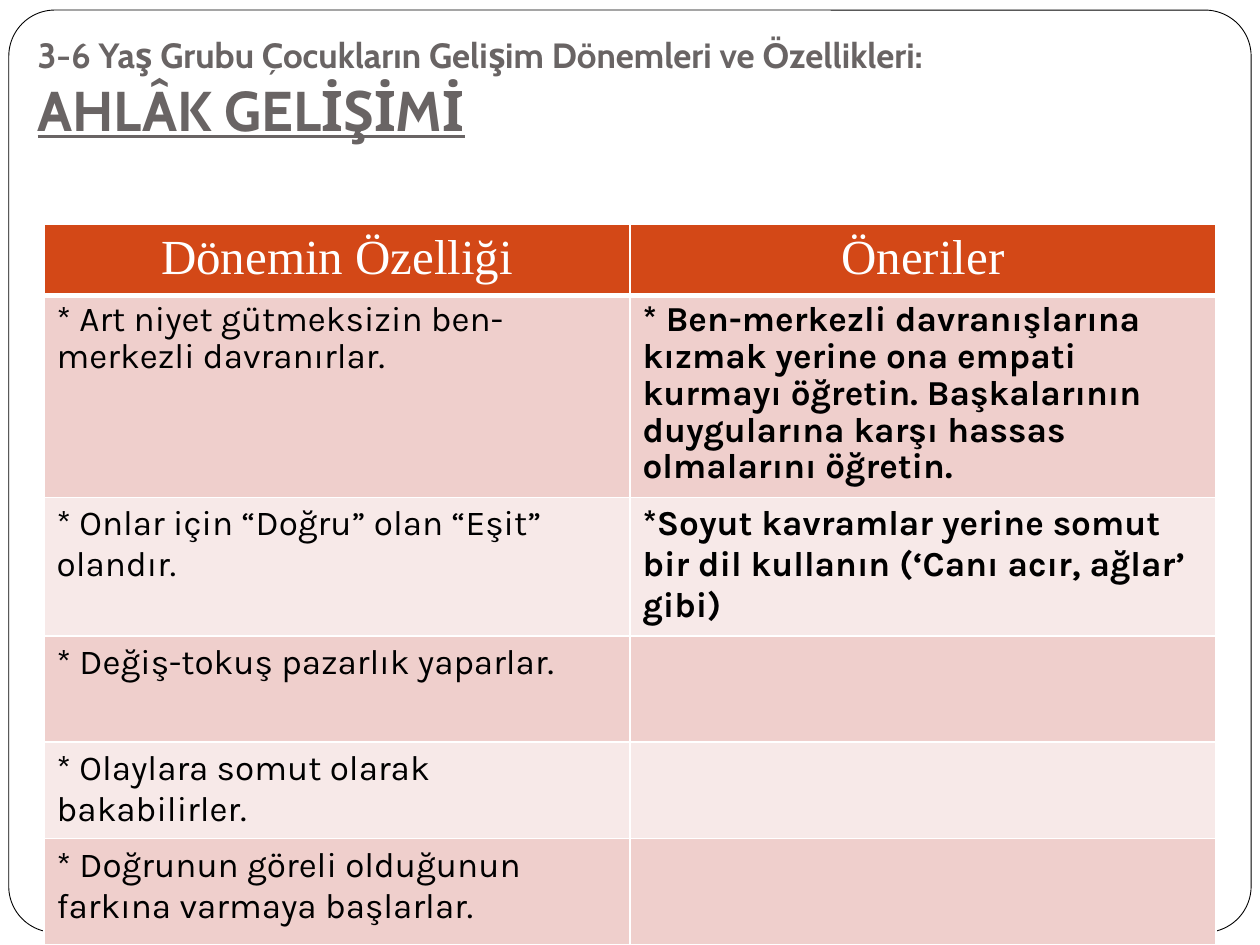
"""Build the slide on moral development at ages 3 to 6."""
import lxml.etree
import pptx
import pptx.dml.color
import pptx.enum.shapes
import pptx.enum.text
import pptx.oxml.ns
import pptx.util

Inches = pptx.util.Inches
COLORS = {
    "white": "FFFFFF", "black": "000000", "title": "696464",
    "header": "D34817", "dark_band": "EFCFCC", "light_band": "F7E9E8",
}
ROWS = [
    ("Dönemin Özelliği", "Öneriler"),
    ("* Art niyet gütmeksizin ben-merkezli davranırlar.",
     "* Ben-merkezli davranışlarına kızmak yerine ona empati kurmayı öğretin. "
     "Başkalarının duygularına karşı hassas olmalarını öğretin."),
    ("* Onlar için “Doğru” olan “Eşit” olandır.",
     "*Soyut kavramlar yerine somut bir dil kullanın (‘Canı acır, ağlar’ gibi)"),
    ("* Değiş-tokuş pazarlık yaparlar.", ""),
    ("* Olaylara somut olarak bakabilirler.", ""),
    ("* Doğrunun göreli olduğunun farkına varmaya başlarlar.", ""),
]
ROW_HEIGHTS = [0.56, 1.55, 0.74, 0.84, 0.74, 0.84]


def rgb(name):
    return pptx.dml.color.RGBColor.from_string(COLORS[name])


def write(para, text, *, size=20, font="Karla", color="black", bold=False, underline=False):
    span = para.add_run()
    span.text = text
    span.font.size = pptx.util.Pt(size)
    span.font.name = font
    span.font.color.rgb = rgb(color)
    span.font.bold = bold
    span.font.underline = underline


deck = pptx.Presentation()
deck.slide_width, deck.slide_height = Inches(10), Inches(7.5)
page = deck.slides.add_slide(deck.slide_layouts[6])

frame = page.shapes.add_shape(
    pptx.enum.shapes.MSO_SHAPE.ROUNDED_RECTANGLE,
    Inches(0.07), Inches(0.08), Inches(9.86), Inches(7.32))
frame.adjustments[0] = 0.05
frame.shadow.inherit = False
frame.fill.solid()
frame.fill.fore_color.rgb = rgb("white")
frame.line.color.rgb = rgb("black")
frame.line.width = pptx.util.Pt(0.5)

title = page.shapes.add_textbox(Inches(0.2), Inches(0.05), Inches(9.8), Inches(1.18)).text_frame
title.word_wrap = True
title.vertical_anchor = pptx.enum.text.MSO_ANCHOR.BOTTOM
title.margin_bottom = Inches(0.1)
para = title.paragraphs[0]
write(para, "3-6 Yaş Grubu Çocukların Gelişim Dönemleri ve Özellikleri:",
      font="Cabin", color="title", bold=True)
para.add_line_break()
write(para, "AHLÂK GELİŞİMİ", size=32, font="Cabin", color="title", bold=True, underline=True)

table = page.shapes.add_table(
    len(ROWS), 2, Inches(0.35), Inches(1.78), Inches(9.3), Inches(sum(ROW_HEIGHTS))).table
for column in table.columns:
    column.width = Inches(4.65)

for row, (texts, height) in enumerate(zip(ROWS, ROW_HEIGHTS)):
    table.rows[row].height = Inches(height)
    band = "header" if row == 0 else "dark_band" if row % 2 else "light_band"
    for column, text in enumerate(texts):
        cell = table.cell(row, column)
        cell.fill.solid()
        cell.fill.fore_color.rgb = rgb(band)
        properties = cell._tc.get_or_add_tcPr()
        for place, side in enumerate(("lnL", "lnR", "lnT", "lnB")):
            points = 3 if row == 0 and side == "lnB" else 1
            border = lxml.etree.Element(
                pptx.oxml.ns.qn(f"a:{side}"), w=str(pptx.util.Pt(points)))
            fill = lxml.etree.SubElement(border, pptx.oxml.ns.qn("a:solidFill"))
            lxml.etree.SubElement(fill, pptx.oxml.ns.qn("a:srgbClr"), val=COLORS["white"])
            properties.insert(place, border)
        para = cell.text_frame.paragraphs[0]
        if row == 0:
            para.alignment = pptx.enum.text.PP_ALIGN.CENTER
            write(para, text, size=28, font="Times New Roman", color="white")
        elif text:
            if row == 1:
                para.line_spacing = 0.9
            write(para, text, bold=column == 1)

deck.save("out.pptx")
